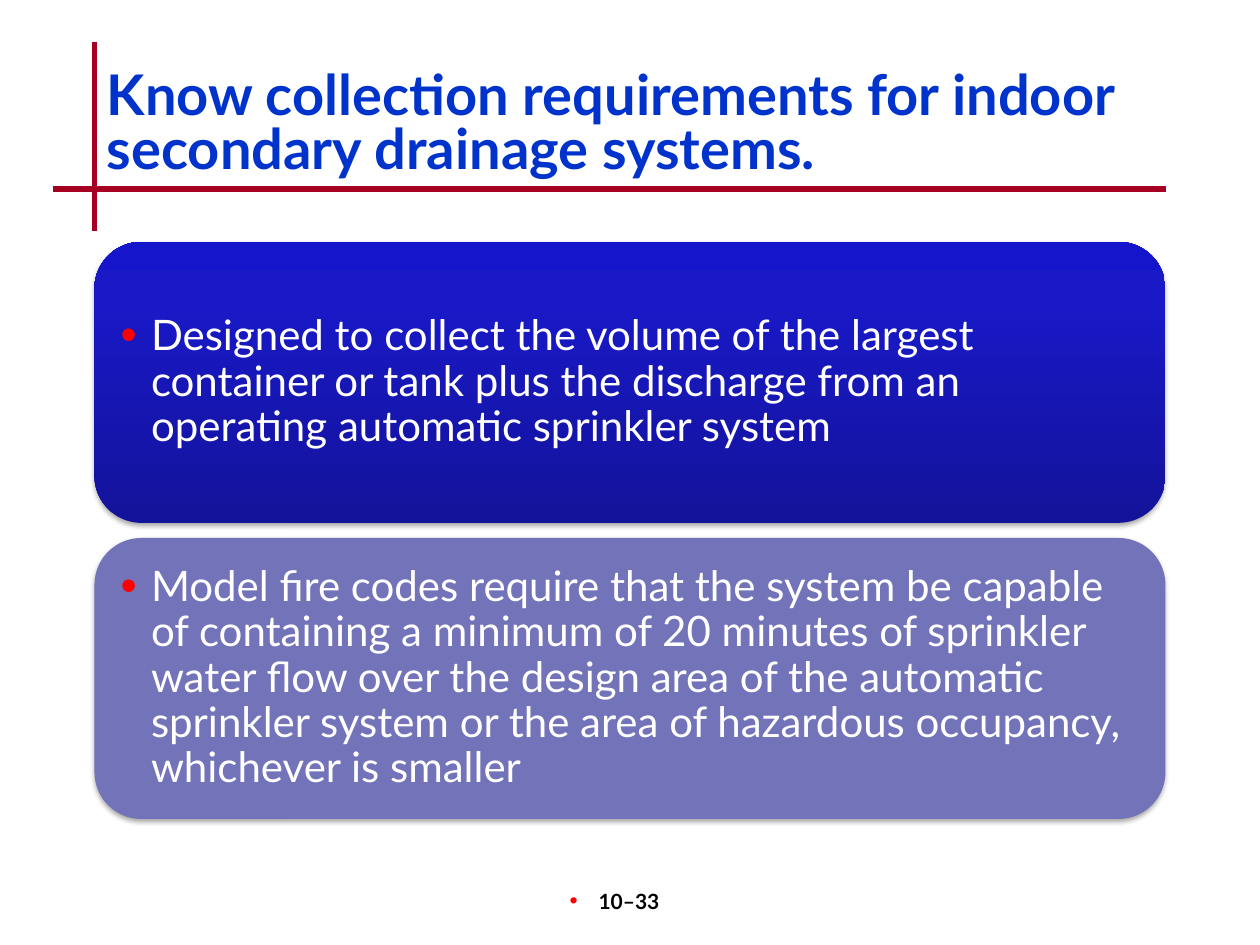
from dataclasses import dataclass

from lxml import etree
from pptx import Presentation
from pptx.dml.color import RGBColor
from pptx.enum.shapes import MSO_CONNECTOR, MSO_SHAPE
from pptx.enum.text import MSO_ANCHOR, PP_ALIGN
from pptx.oxml.ns import qn
from pptx.util import Inches, Pt

ROUND = MSO_SHAPE.ROUNDED_RECTANGLE
STRAIGHT = MSO_CONNECTOR.STRAIGHT
TOP, MIDDLE = MSO_ANCHOR.TOP, MSO_ANCHOR.MIDDLE
LEFT, CENTER = PP_ALIGN.LEFT, PP_ALIGN.CENTER


@dataclass(frozen=True)
class Theme:
    font: str = "Lato"
    title: str = "0033CC"
    rule: str = "A50021"
    dot: str = "FF0000"
    light: str = "FFFFFF"
    dark: str = "000000"
    pale: str = "7373B9"
    blend: tuple = ((0, "13139A"), (80, "1919C8"), (100, "1515CC"))
    head: int = 32
    body: int = 24
    foot: int = 12


def add(parent, tag, **attrs):
    """Append an XML child such as a:gs and return it."""
    node = etree.SubElement(parent, qn(tag))
    for key, value in attrs.items():
        node.set(key, str(value))
    return node


class Page:
    def __init__(self, slide, theme):
        self.shapes = slide.shapes
        self.theme = theme

    def rule(self, x1, y1, x2, y2):
        line = self.shapes.add_connector(
            STRAIGHT, Inches(x1), Inches(y1), Inches(x2), Inches(y2))
        line.line.color.rgb = RGBColor.from_string(self.theme.rule)
        line.line.width = Pt(3)
        add(line._element.spPr, "a:effectLst")

    def panel(self, x, y, w, h, fill):
        """Draw a shadowed card; fill is one colour or a tuple of stops."""
        card = self.shapes.add_shape(
            ROUND, Inches(x), Inches(y), Inches(w), Inches(h))
        if isinstance(fill, str):
            card.fill.solid()
            card.fill.fore_color.rgb = RGBColor.from_string(fill)
        else:
            card.fill.gradient()
            card.fill.gradient_angle = 90
            stops = card._element.spPr.find(".//" + qn("a:gsLst"))
            for old in list(stops):
                stops.remove(old)
            for pos, color in fill:
                add(add(stops, "a:gs", pos=pos * 1000), "a:srgbClr", val=color)
        card.line.fill.background()
        card.shadow.inherit = False
        effects = card._element.spPr.find(qn("a:effectLst"))
        shade = add(effects, "a:outerShdw", blurRad=Pt(3.1), dist=Pt(1.8),
                    dir=90 * 60000, rotWithShape=0)
        add(add(shade, "a:srgbClr", val=self.theme.dark), "a:alpha", val=35000)

    def text(self, x, y, w, h, words, size, color, bold=False, pad=0.05,
             anchor=TOP, align=LEFT, space=1.0, bullet=None):
        """Add one paragraph; bullet is (left margin, hanging indent)."""
        box = self.shapes.add_textbox(
            Inches(x), Inches(y), Inches(w), Inches(h))
        frame = box.text_frame
        frame.word_wrap = True
        frame.vertical_anchor = anchor
        frame.margin_left = frame.margin_right = Inches(0.1)
        frame.margin_top = frame.margin_bottom = Inches(pad)
        para = frame.paragraphs[0]
        para.text = words
        para.alignment = align
        para.line_spacing = space
        if bullet:
            self.bullet(para, *bullet)
        font = para.font
        font.name, font.size, font.bold = self.theme.font, Pt(size), bold
        font.color.rgb = RGBColor.from_string(color)

    def bullet(self, para, margin, hang):
        props = para._p.get_or_add_pPr()
        props.set("marL", str(Inches(margin)))
        props.set("indent", str(-Inches(hang)))
        add(add(props, "a:buClr"), "a:srgbClr", val=self.theme.dot)
        add(props, "a:buSzPct", val=110000)
        add(props, "a:buFont", typeface="Arial")
        add(props, "a:buChar", char="•")


def main():
    deck = Presentation()
    deck.slide_width, deck.slide_height = Inches(10), Inches(7.5)
    theme = Theme()
    page = Page(deck.slides.add_slide(deck.slide_layouts[6]), theme)

    page.rule(0.75, 0.33, 0.75, 1.83)
    page.rule(0.42, 1.5, 9.25, 1.5)
    page.text(3.92, 7, 2.08, 0.5, "10–33", theme.foot, theme.dark, bold=True,
              align=CENTER, bullet=(0.05, 0.23))
    page.text(0.75, 0.53, 8.5, 1.17,
              "Know collection requirements for indoor secondary drainage "
              "systems.", theme.head, theme.title, bold=True, space=0.8)

    cards = (
        (theme.blend,
         "Designed to collect the volume of the largest container or tank "
         "plus the discharge from an operating automatic sprinkler system"),
        (theme.pale,
         "Model fire codes require that the system be capable of containing "
         "a minimum of 20 minutes of sprinkler water flow over the design "
         "area of the automatic sprinkler system or the area of hazardous "
         "occupancy, whichever is smaller"),
    )
    left, top, width, height, step, inset = 0.75, 1.92, 8.5, 2.23, 2.35, 0.11
    for row, (fill, words) in enumerate(cards):
        y = top + row * step
        page.panel(left, y, width, height, fill)
        page.text(left + inset, y + inset, width - 2 * inset,
                  height - 2 * inset, words, theme.body, theme.light, pad=0.1,
                  anchor=MIDDLE, space=0.9, bullet=(0.24, 0.24))

    deck.save("out.pptx")


if __name__ == "__main__":
    main()
